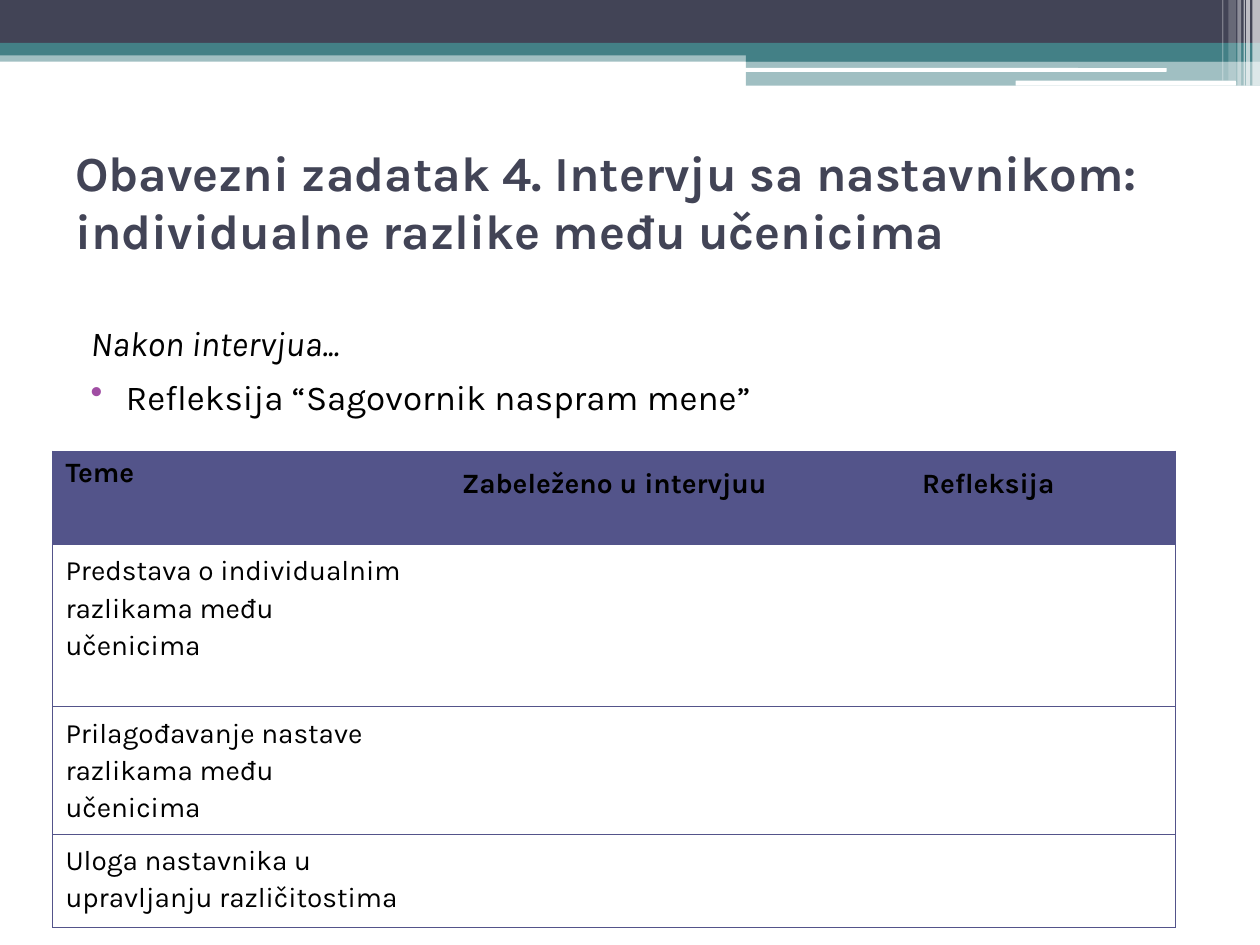
from dataclasses import dataclass

from lxml import etree
from pptx import Presentation
from pptx.dml.color import RGBColor
from pptx.enum.shapes import MSO_SHAPE
from pptx.enum.text import MSO_ANCHOR, PP_ALIGN
from pptx.oxml.ns import qn
from pptx.util import Inches, Pt

RECT, ROUND = MSO_SHAPE.RECTANGLE, MSO_SHAPE.ROUNDED_RECTANGLE
LEFT, MID = PP_ALIGN.LEFT, PP_ALIGN.CENTER
TOP, CENTER = MSO_ANCHOR.TOP, MSO_ANCHOR.MIDDLE
WIDE, HIGH = Inches(10), Inches(7.5)
COLS, ROWS = 1000, 750


@dataclass(frozen=True)
class Theme:
    font: str = "Karla"
    navy: str = "424456"
    teal: str = "438086"
    white: str = "FFFFFF"
    black: str = "000000"
    grid: str = "53548A"
    dot: str = "A04DA3"
    title: int = 28
    body: int = 20
    cell: int = 16
    rule: float = 0.75


LOOK = Theme()

BANDS = [
    (0, 40, 1000, 9, LOOK.teal, 50),
    (0, 0, 1000, 34, LOOK.navy, 100),
    (0, 34, 1000, 10, LOOK.teal, 100),
    (592, 39, 408, 10, LOOK.teal, 100),
    (592, 48, 408, 20, LOOK.teal, 50),
]
SLOTS = [(591, 54, 335, 3), (806, 64, 175, 4)]
STRIPES = [
    (994, 6, 68, 65), (989, 3, 68, 65), (987, 1, 68, 60),
    (982, 3, 68, 40), (975, 6, 64, 20), (970, 1, 64, 30),
]
HEADS = ["Teme", "Zabeleženo u intervjuu", "Refleksija"]
TOPICS = [
    "Predstava o individualnim razlikama među učenicima",
    "Prilagođavanje nastave razlikama među učenicima",
    "Uloga nastavnika u upravljanju različitostima",
]
TALL = [74, 129, 74, 74]


def across(n):
    return round(WIDE * n / COLS)


def down(n):
    return round(HIGH * n / ROWS)


def place(x, y, w, h):
    return across(x), down(y), across(w), down(h)


def band(slide, x, y, w, h, color, alpha=100, kind=RECT):
    shape = slide.shapes.add_shape(kind, *place(x, y, w, h))
    shape.shadow.inherit = False
    shape.line.fill.background()
    shape.fill.solid()
    shape.fill.fore_color.rgb = RGBColor.from_string(color)
    if alpha < 100:
        tone = shape.fill._xPr.find(".//" + qn("a:srgbClr"))
        etree.SubElement(tone, qn("a:alpha"), val=str(alpha * 1000))


def write(para, text, size=LOOK.cell, color=LOOK.black, bold=False,
          slant=False, align=LEFT, space=1.0, before=0):
    para.alignment = align
    para.line_spacing = space
    para.space_before = Pt(before)
    run = para.add_run()
    run.text = text
    font = run.font
    font.name, font.size = LOOK.font, Pt(size)
    font.bold, font.italic = bold, slant
    font.color.rgb = RGBColor.from_string(color)


def frame(slide, x, y, w, h, anchor=TOP):
    text = slide.shapes.add_textbox(*place(x, y, w, h)).text_frame
    text.word_wrap = True
    text.vertical_anchor = anchor
    return text


def indent(para, mark=False):
    props = para._p.get_or_add_pPr()
    props.set("marL", str(across(40)))
    props.set("indent", str(-across(28)))
    if mark:
        tint = etree.SubElement(props, qn("a:buClr"))
        etree.SubElement(tint, qn("a:srgbClr"), val=LOOK.dot)
        etree.SubElement(props, qn("a:buChar"), char="•")
    else:
        etree.SubElement(props, qn("a:buNone"))


def edge(cell, sides):
    props = cell._tc.get_or_add_tcPr()
    for spot, side in enumerate("LRTB"):
        line = etree.Element(qn("a:ln" + side), w=str(Pt(LOOK.rule)))
        if side in sides:
            fill = etree.SubElement(line, qn("a:solidFill"))
            etree.SubElement(fill, qn("a:srgbClr"), val=LOOK.grid)
        else:
            etree.SubElement(line, qn("a:noFill"))
        props.insert(spot, line)


def header(slide):
    for item in BANDS:
        band(slide, *item)
    for slot in SLOTS:
        band(slide, *slot, LOOK.white, kind=ROUND)
    for x, w, h, alpha in STRIPES:
        band(slide, x, 0, w, h, LOOK.white, alpha)


def title(slide):
    text = frame(slide, 50, 125, 900, 117, CENTER)
    text.margin_bottom = down(53)
    write(text.paragraphs[0],
          "Obavezni zadatak 4. Intervju sa nastavnikom: "
          "individualne razlike među učenicima",
          size=LOOK.title, color=LOOK.navy, bold=True)


def body(slide):
    text = frame(slide, 50, 246, 925, 473)
    form = dict(size=LOOK.body, space=1.14, before=3)
    first, second = text.paragraphs[0], text.add_paragraph()
    write(first, "Nakon intervjua...", slant=True, **form)
    indent(first)
    write(second, "Refleksija “Sagovornik naspram mene”", **form)
    indent(second, mark=True)


def table(slide):
    grid = slide.shapes.add_table(
        len(TALL), len(HEADS), *place(42, 358, 892, sum(TALL))).table
    grid.first_row = grid.horz_banding = False
    for row, tall in zip(grid.rows, TALL):
        row.height = down(tall)
    for col in grid.columns:
        col.width = across(297)
    last = len(HEADS) - 1
    for r in range(len(TALL)):
        for c in range(len(HEADS)):
            cell = grid.cell(r, c)
            if r == 0:
                cell.fill.solid()
                cell.fill.fore_color.rgb = RGBColor.from_string(LOOK.grid)
            else:
                cell.fill.background()
            edge(cell, "TB" + "L" * (c == 0) + "R" * (c == last))
    for c, head in enumerate(HEADS):
        cell = grid.cell(0, c)
        if c:
            cell.margin_left = cell.margin_right = across(7)
            cell.margin_top = cell.margin_bottom = 0
        write(cell.text_frame.paragraphs[0], head, bold=True,
              align=MID if c else LEFT, space=1.5 if c else 1.0)
    for r, topic in enumerate(TOPICS, 1):
        write(grid.cell(r, 0).text_frame.paragraphs[0], topic, space=1.14)


def main():
    deck = Presentation()
    deck.slide_width, deck.slide_height = WIDE, HIGH
    slide = deck.slides.add_slide(deck.slide_layouts[6])
    for draw in (header, title, body, table):
        draw(slide)
    deck.save("out.pptx")


if __name__ == "__main__":
    main()
